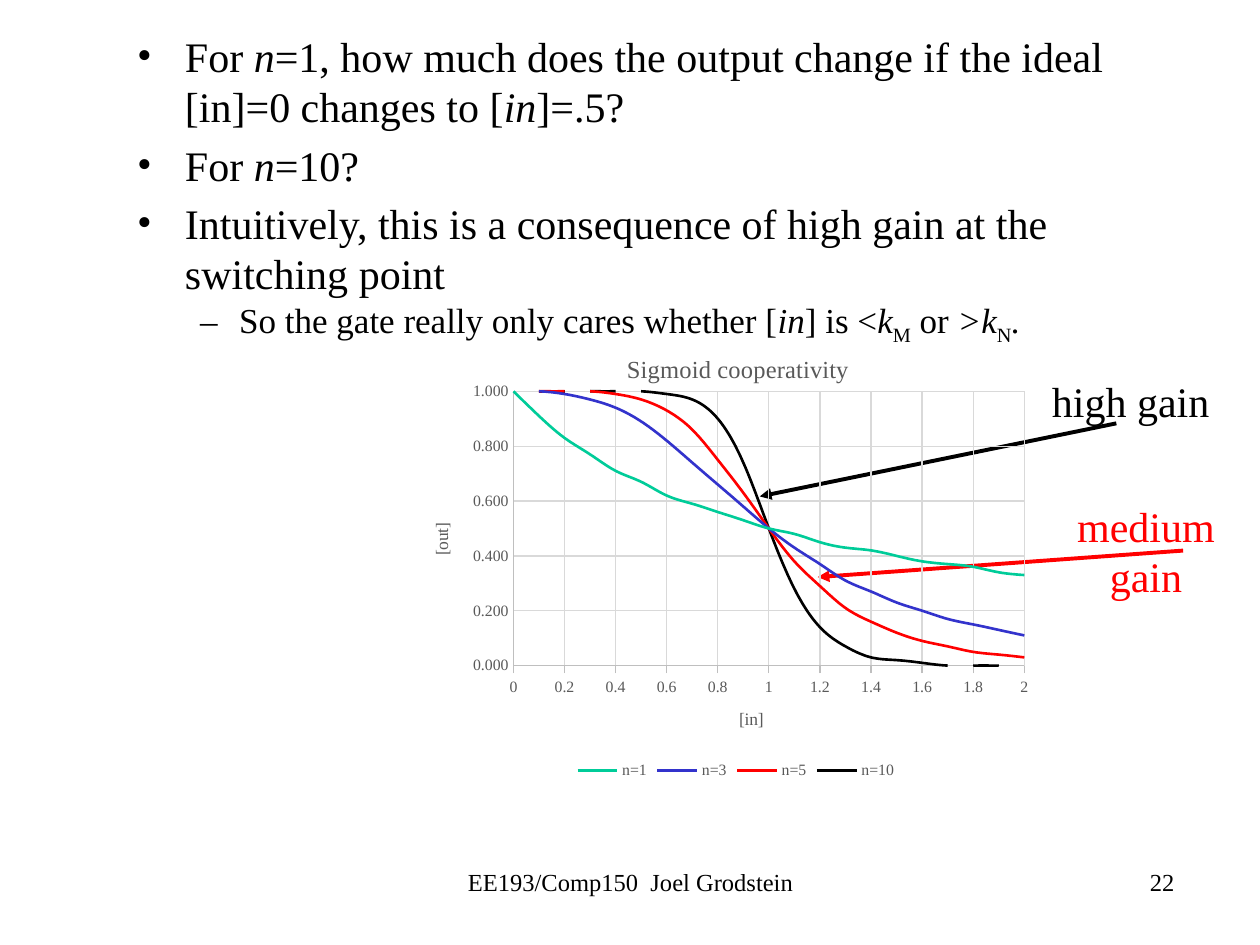
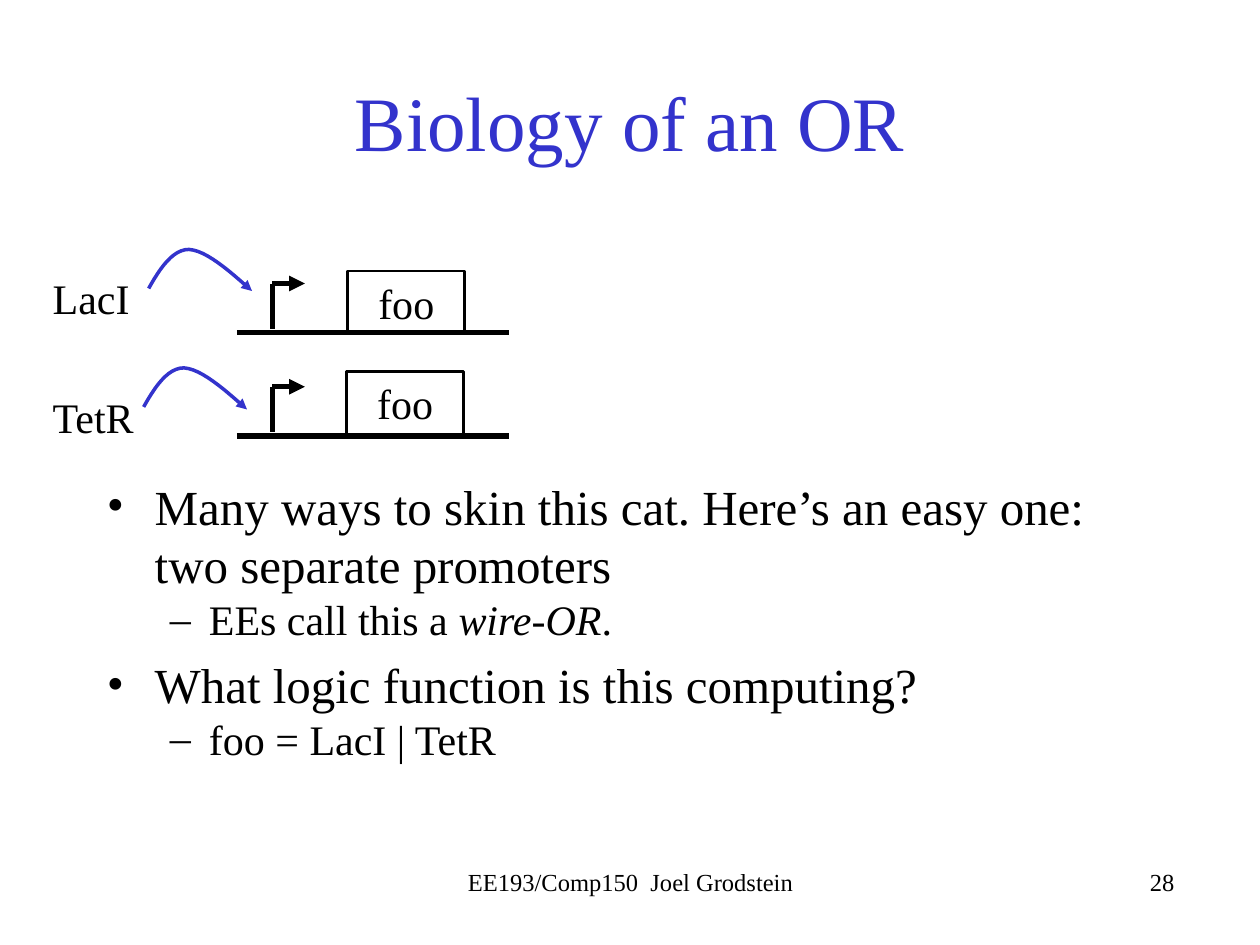
"""Build two lecture slides: sigmoid cooperativity and the biology of an OR."""
import dataclasses

import lxml.etree
import pptx
import pptx.chart.data
import pptx.dml.color
import pptx.enum.chart
import pptx.enum.shapes
import pptx.enum.text
import pptx.oxml.ns
import pptx.util

Inches = pptx.util.Inches
Pt = pptx.util.Pt
qn = pptx.oxml.ns.qn
rgb = pptx.dml.color.RGBColor.from_string
Align = pptx.enum.text.PP_ALIGN


@dataclasses.dataclass(frozen=True)
class Theme:
    font: str = "Times New Roman"
    black: str = "000000"
    blue: str = "3333CC"
    red: str = "FF0000"
    green: str = "00CC99"
    gray: str = "595959"
    axis: str = "BFBFBF"
    grid: str = "D9D9D9"
    title: int = 44
    large: int = 28
    body: int = 24
    small: int = 20
    footer: int = 14
    axis_title: int = 10
    tick: int = 9


theme = Theme()


def write(shape, text, size=theme.body, color=theme.black, align=Align.LEFT,
          bullet=None, indent=(0, 0), before=0):
    """Add a paragraph; *stars* mark italics and ~tildes~ mark subscripts."""
    frame = shape.text_frame
    frame.word_wrap = True
    paragraph = frame.add_paragraph() if frame.text else frame.paragraphs[0]
    paragraph.alignment = align
    paragraph.space_before = Pt(before)
    for i, slanted in enumerate(text.split("*")):
        for j, piece in enumerate(slanted.split("~")):
            if not piece:
                continue
            run = paragraph.add_run()
            run.text = piece
            run.font.name = theme.font
            run.font.size = Pt(size)
            run.font.color.rgb = rgb(color)
            run.font.italic = i % 2 == 1
            if j % 2:
                run.font._element.set("baseline", "-25000")
    if bullet:
        properties = paragraph._p.get_or_add_pPr()
        left, hanging = indent
        properties.set("marL", str(Inches(left)))
        properties.set("indent", str(Inches(hanging)))
        lxml.etree.SubElement(properties, qn("a:buFont"), typeface=theme.font)
        lxml.etree.SubElement(properties, qn("a:buChar"), char=bullet)


def stroke(shape, color, width, arrow=False):
    """Style an outline, drop its shadow and optionally end it in an arrow."""
    shape.line.color.rgb = rgb(color)
    shape.line.width = Pt(width)
    if arrow:
        lxml.etree.SubElement(shape.line._get_or_add_ln(), qn("a:tailEnd"), type="triangle")
    lxml.etree.SubElement(shape._element.spPr, qn("a:effectLst"))


STRAIGHT = pptx.enum.shapes.MSO_CONNECTOR.STRAIGHT
RECTANGLE = pptx.enum.shapes.MSO_SHAPE.RECTANGLE
point = {"bullet": "•", "indent": (0.38, -0.38)}
subpoint = {"bullet": "–", "indent": (0.81, -0.31)}

deck = pptx.Presentation()
deck.slide_width, deck.slide_height = Inches(10), Inches(7.5)
gain = deck.slides.add_slide(deck.slide_layouts[6])
biology = deck.slides.add_slide(deck.slide_layouts[5])

for slide, number in ((gain, "22"), (biology, "28")):
    for left, label, align in ((6.25, number, Align.RIGHT),
                               (3.42, "EE193/Comp150  Joel Grodstein", Align.CENTER)):
        footer = slide.shapes.add_textbox(Inches(left), Inches(6.83), Inches(3.17), Inches(0.5))
        write(footer, label, size=theme.footer, align=align)

questions = gain.shapes.add_textbox(Inches(0.99), Inches(0.19), Inches(8.1), Inches(2.61))
for question in ("For *n*=1, how much does the output change if the ideal [in]=0 changes to [*in*]=.5?",
                 "For *n*=10?",
                 "Intuitively, this is a consequence of high gain at the switching point"):
    write(questions, question, before=4.6, **point)
write(questions, "So the gate really only cares whether [*in*] is <*k*~M~ or *>k*~N~*.*",
      size=theme.small, **subpoint)

for label, box, align, color, ends in (
        ("high gain", (8.25, 2.93, 1.68, 0.5), Align.LEFT, theme.black, (8.86, 3.36, 6.03, 3.94)),
        ("medium gain", (8.39, 3.92, 1.41, 0.91), Align.CENTER, theme.red, (9.39, 4.37, 6.49, 4.58))):
    callout = gain.shapes.add_textbox(*map(Inches, box))
    write(callout, label, color=color, align=align)
    pointer = gain.shapes.add_connector(STRAIGHT, *map(Inches, ends))
    stroke(pointer, color, 2.25, arrow=True)

curves = {1: theme.green, 3: theme.blue, 5: theme.red, 10: theme.black}
inputs = [step / 10 for step in range(21)]
sigmoids = pptx.chart.data.XyChartData()
for n in curves:
    sigmoid = sigmoids.add_series(f"n={n}")
    for x in inputs:
        sigmoid.add_data_point(x, round(1 / (1 + x ** n), 2))
chart = gain.shapes.add_chart(
    pptx.enum.chart.XL_CHART_TYPE.XY_SCATTER_SMOOTH_NO_MARKERS,
    Inches(3.34), Inches(2.66), Inches(5), Inches(3.57), sigmoids).chart
chart.font.name = theme.font
chart.font.size = Pt(theme.axis_title)
chart.font.color.rgb = rgb(theme.gray)
chart.plots[0].vary_by_categories = False
for series, color in zip(chart.plots[0].series, curves.values()):
    series._element.find(qn("c:smooth")).set("val", "1")
    series.format.line.color.rgb = rgb(color)
    series.format.line.width = Pt(1.5)

chart.has_legend = True
chart.legend.position = pptx.enum.chart.XL_LEGEND_POSITION.BOTTOM
chart.legend.include_in_layout = False
chart.legend.font.name = theme.font
chart.legend.font.size = Pt(theme.tick)
chart.legend.font.color.rgb = rgb(theme.gray)

Tick = pptx.enum.chart.XL_TICK_MARK
for axis, top, tick, number_format in (
        (chart.category_axis, 2, Tick.OUTSIDE, "General"),
        (chart.value_axis, 1, Tick.NONE, "0.000")):
    axis.minimum_scale, axis.maximum_scale, axis.major_unit = 0, top, 0.2
    axis.major_tick_mark, axis.minor_tick_mark = tick, Tick.NONE
    axis.has_major_gridlines = True
    axis.tick_labels.number_format = number_format
    axis.tick_labels.number_format_is_linked = False
    axis.tick_labels.font.name = theme.font
    axis.tick_labels.font.size = Pt(theme.tick)
    axis.tick_labels.font.color.rgb = rgb(theme.gray)
    for rule, color in ((axis, theme.axis), (axis.major_gridlines, theme.grid)):
        rule.format.line.color.rgb = rgb(color)
        rule.format.line.width = Pt(0.75)

chart.has_title = True
placements = []
for heading, label, size, spot in (
        (chart.chart_title, "Sigmoid cooperativity", theme.footer, {"x": 0.32, "y": 0.03}),
        (chart.category_axis.axis_title, "[in]", theme.axis_title, {"x": 0.5, "y": 0.82}),
        (chart.value_axis.axis_title, "[out]", theme.axis_title, {"x": 0.01, "y": 0.41})):
    write(heading, label, size=size, color=theme.gray, align=Align.CENTER)
    heading.text_frame.paragraphs[0].runs[0].font.bold = False
    placements.append((heading._element, 1, spot))

plot_area = chart.element.find(".//" + qn("c:plotArea"))
placements.append((plot_area, 0, {"layoutTarget": "inner", "x": 0.147, "y": 0.125, "w": 0.811, "h": 0.61}))
for element, position, spot in placements:
    for automatic in element.findall(qn("c:layout")):
        element.remove(automatic)
    layout = lxml.etree.Element(qn("c:layout"))
    manual = lxml.etree.SubElement(layout, qn("c:manualLayout"))
    modes = {"xMode": "edge", "yMode": "edge"}
    target = {key: spot[key] for key in spot if key == "layoutTarget"}
    for key, value in {**target, **modes, **spot}.items():
        lxml.etree.SubElement(manual, qn("c:" + key), val=str(value))
    element.insert(position, layout)

for anchor in (plot_area[-1], chart.element.find(qn("c:chart"))):
    clear = lxml.etree.Element(qn("c:spPr"))
    lxml.etree.SubElement(clear, qn("a:noFill"))
    lxml.etree.SubElement(lxml.etree.SubElement(clear, qn("a:ln")), qn("a:noFill"))
    anchor.addnext(clear)

title = biology.shapes.title
title.left, title.top, title.width, title.height = map(Inches, (0.75, 0.33, 8.5, 1.25))
title.text_frame.auto_size = pptx.enum.text.MSO_AUTO_SIZE.NONE
title.text_frame.vertical_anchor = pptx.enum.text.MSO_ANCHOR.MIDDLE
write(title, "Biology of an OR", size=theme.title, color=theme.blue, align=Align.CENTER)

remarks = biology.shapes.add_textbox(Inches(0.75), Inches(3.73), Inches(8.5), Inches(2.94))
for remark, detail in (
        ("Many ways to skin this cat. Here’s an easy one: two separate promoters",
         "EEs call this a *wire-OR*."),
        ("What logic function is this computing?", "foo = LacI | TetR")):
    write(remarks, remark, size=theme.large, before=6, **point)
    write(remarks, detail, **subpoint)

arc = (((1.18, 2.29), (1.27, 2.13), (1.37, 1.98), (1.5, 1.98)),
       ((1.5, 1.98), (1.64, 1.99), (1.82, 2.15), (2, 2.31)))
for protein, label_top, strand_y, gene_left, gene_top, shift in (
        ("LacI", 2.11, 2.64, 2.76, 2.15, (0, 0)),
        ("TetR", 3.06, 3.46, 2.75, 2.95, (-0.04, 0.94))):
    promoter_y = strand_y - 0.39
    for ends, arrow in (((1.88, strand_y, 4.04, strand_y), False),
                        ((2.16, promoter_y, 2.16, strand_y - 0.03), False),
                        ((2.16, promoter_y, 2.42, promoter_y), True)):
        stroke(biology.shapes.add_connector(STRAIGHT, *map(Inches, ends)), theme.black, 3, arrow)

    protein_label = biology.shapes.add_textbox(Inches(0.32), Inches(label_top), Inches(0.9), Inches(0.5))
    write(protein_label, protein)

    route = []
    for bezier in arc:
        for step in range(13):
            t = step / 12
            weights = ((1 - t) ** 3, 3 * t * (1 - t) ** 2, 3 * t ** 2 * (1 - t), t ** 3)
            route.append([Inches(offset + sum(w * c for w, c in zip(weights, coords)))
                          for offset, coords in zip(shift, zip(*bezier))])
    builder = biology.shapes.build_freeform(*route[0])
    builder.add_line_segments(route[1:], close=False)
    binding = builder.convert_to_shape()
    binding.fill.background()
    stroke(binding, theme.blue, 2, arrow=True)

    gene = biology.shapes.add_shape(RECTANGLE, Inches(gene_left), Inches(gene_top), Inches(0.93), Inches(0.5))
    gene.fill.background()
    stroke(gene, theme.black, 1.5)
    write(gene, "foo", align=Align.CENTER)

deck.save("out.pptx")
